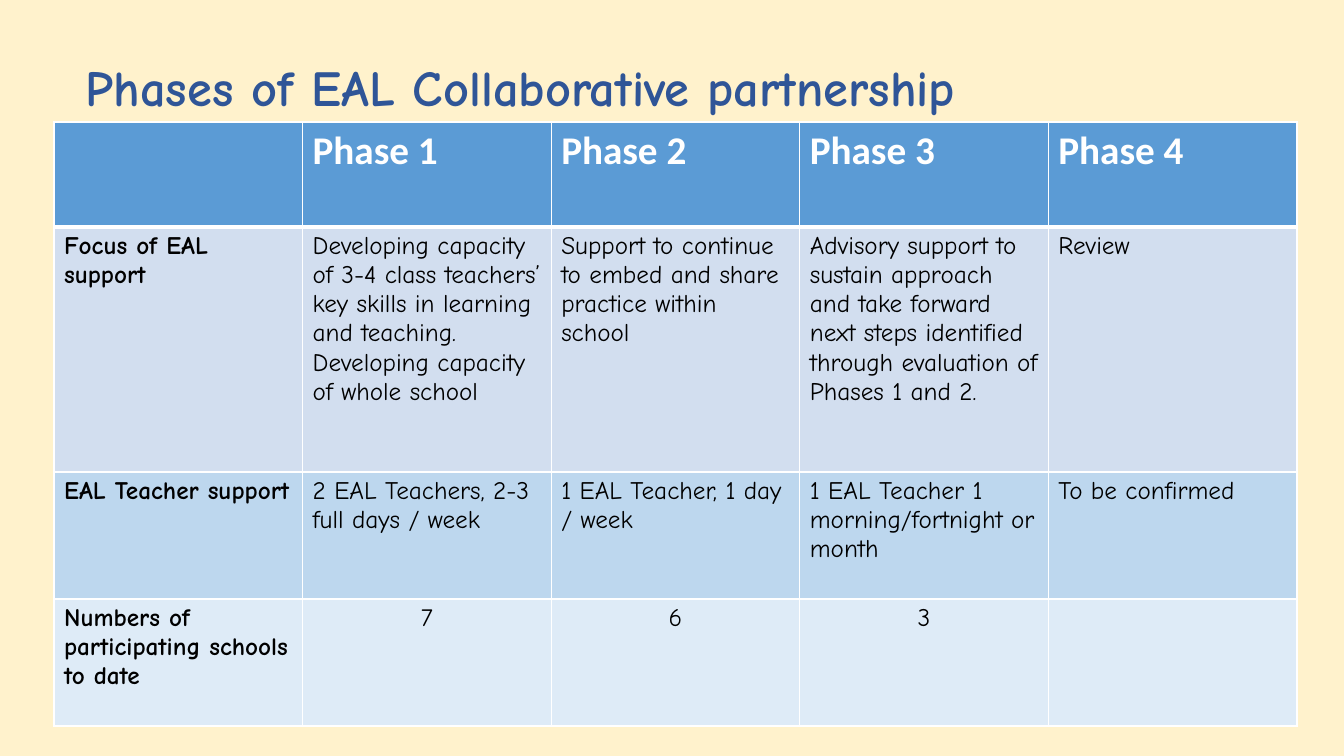
"""Build the slide on the phases of the EAL partnership."""
from lxml import etree
from pptx import Presentation
from pptx import util as u
from pptx.dml.color import RGBColor
from pptx.enum import text
from pptx.oxml.ns import qn

PX = 914400 / 100.8
CREAM = RGBColor(0xFF, 0xF2, 0xCC)
NAVY = RGBColor(0x2F, 0x55, 0x97)
WHITE = RGBColor(0xFF, 0xFF, 0xFF)
BLACK = RGBColor(0, 0, 0)
BLUE = RGBColor(0x5B, 0x9B, 0xD5)
MIST = RGBColor(0xD2, 0xDE, 0xEF)
SKY = RGBColor(0xBD, 0xD7, 0xEE)
PALE = RGBColor(0xDE, 0xEB, 0xF7)
HAND = "Comic Neue"


def px(n):
    return u.Emu(round(n * PX))


def write(frame, words, size=18, face=HAND, color=BLACK, bold=False, align=None, gap=None):
    for i, line in enumerate(words.split("\n")):
        para = frame.add_paragraph() if i else frame.paragraphs[0]
        para.alignment = align
        para.line_spacing = gap
        font = para.font
        if line:
            run = para.add_run()
            run.text = line
            font = run.font
        font.size = u.Pt(size)
        font.name = face
        font.bold = bold
        font.color.rgb = color


deck = Presentation()
deck.slide_width, deck.slide_height = px(1344), px(756)
slide = deck.slides.add_slide(deck.slide_layouts[6])
slide.background.fill.solid()
slide.background.fill.fore_color.rgb = CREAM

title = slide.shapes.add_textbox(px(76), px(54), px(1222), px(72)).text_frame
title.word_wrap = True
title.vertical_anchor = text.MSO_ANCHOR.MIDDLE
write(title, "Phases of EAL Collaborative partnership", size=36, color=NAVY, bold=True, gap=0.9)

rows = [
    (105, BLUE, ["", "Phase 1", "Phase 2", "Phase 3", "Phase 4"]),
    (245, MIST, [
        "Focus of EAL support",
        "Developing capacity of 3-4 class teachers’ key skills in learning and teaching.\n"
        "Developing capacity of whole school",
        "Support to continue to embed and share practice within school",
        "Advisory support to sustain approach and take forward next steps "
        "identified through evaluation of Phases 1 and 2.",
        "Review"]),
    (127, SKY, [
        "EAL Teacher support",
        "2 EAL Teachers, 2-3 full days / week",
        "1 EAL Teacher, 1 day / week",
        "1 EAL Teacher 1 morning/fortnight or month",
        "To be confirmed"]),
    (127, PALE, ["Numbers of participating schools to date", "7", "6", "3", ""]),
]
high = sum(row[0] for row in rows)
grid = slide.shapes.add_table(len(rows), 5, px(54), px(122), px(1243), px(high)).table

for r, (tall, fill, words) in enumerate(rows):
    grid.rows[r].height = px(tall)
    for c, word in enumerate(words):
        cell = grid.cell(r, c)
        if r == 0:
            write(cell.text_frame, word, size=28, face="Calibri", color=WHITE, bold=True)
        else:
            align = text.PP_ALIGN.CENTER if word.isdigit() else None
            write(cell.text_frame, word, bold=c == 0, align=align)
        props = cell._tc.get_or_add_tcPr()
        for side in "LRTB":
            thick = (r, side) in ((0, "B"), (1, "T"))
            edge = etree.SubElement(props, qn("a:ln" + side), w=str(u.Pt(3 if thick else 1)))
            paint = etree.SubElement(edge, qn("a:solidFill"))
            etree.SubElement(paint, qn("a:srgbClr"), val=str(WHITE))
        cell.fill.solid()
        cell.fill.fore_color.rgb = fill

deck.save("out.pptx")
